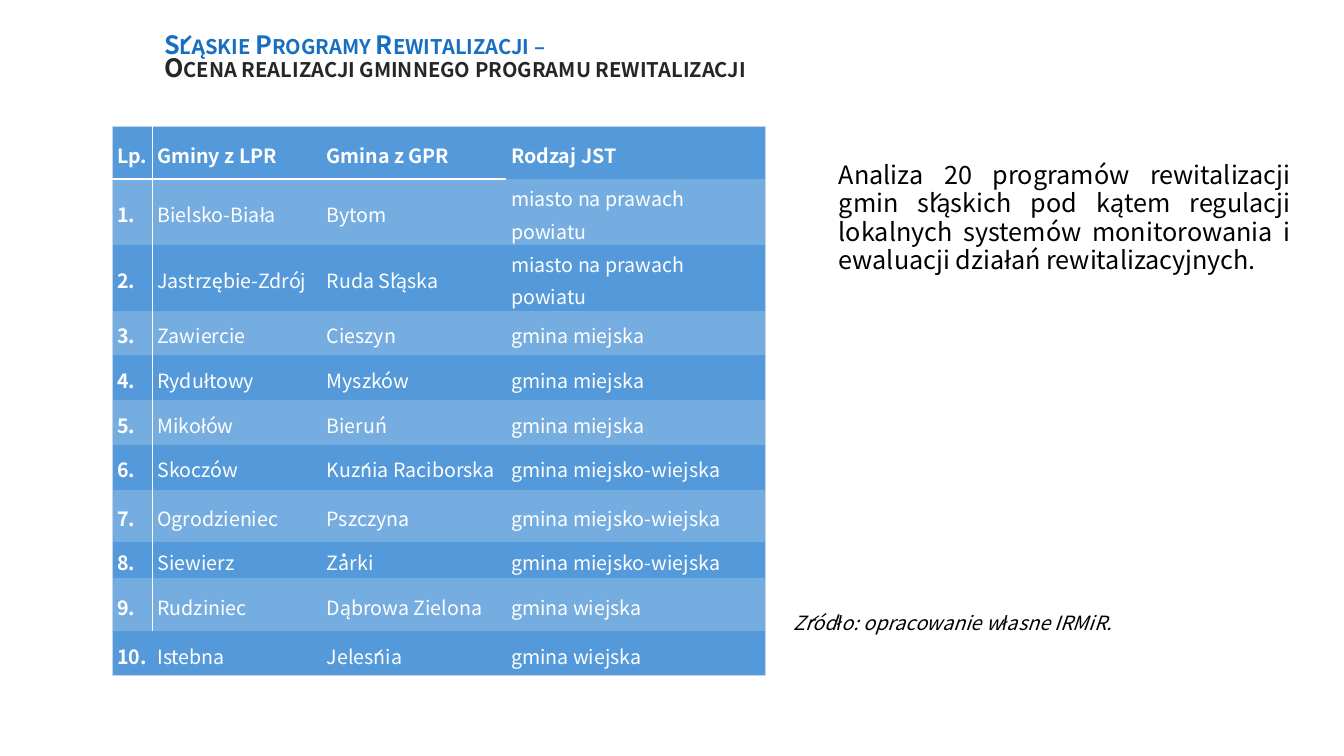
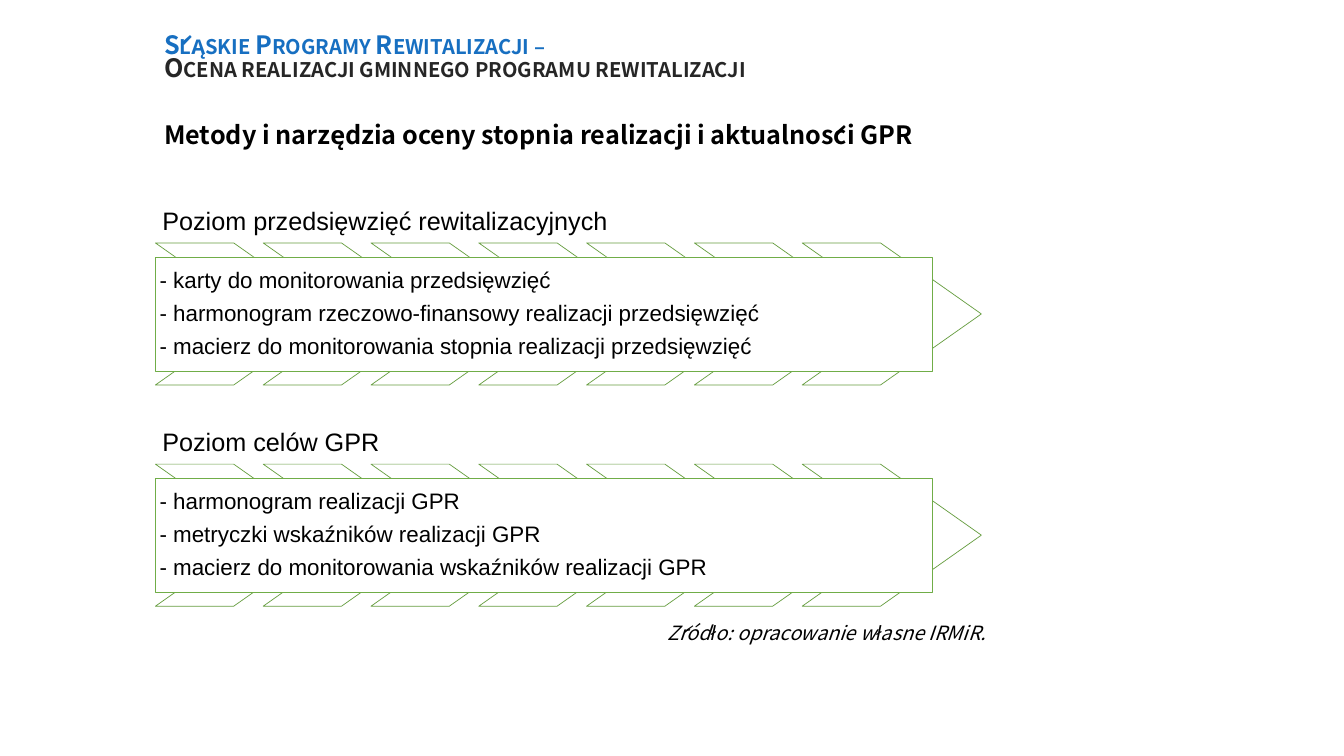
from dataclasses import dataclass

from lxml import etree
from pptx import Presentation
from pptx.dml.color import RGBColor
from pptx.enum.shapes import MSO_SHAPE
from pptx.enum.text import MSO_ANCHOR, MSO_AUTO_SIZE, PP_ALIGN
from pptx.oxml.ns import qn
from pptx.util import Pt

CHEVRON, RECTANGLE = MSO_SHAPE.CHEVRON, MSO_SHAPE.RECTANGLE
TOP, MIDDLE, BOTTOM = MSO_ANCHOR.TOP, MSO_ANCHOR.MIDDLE, MSO_ANCHOR.BOTTOM
LEFT, JUSTIFY = PP_ALIGN.LEFT, PP_ALIGN.JUSTIFY
NO_AUTOFIT = MSO_AUTO_SIZE.NONE
NO_TABLE_STYLE = "{2D5ABB26-0587-4C30-8999-92F81FD0307C}"


@dataclass(frozen=True)
class Theme:
    font: str = "Noto Sans CJK SC"
    diagram_font: str = "Arial"
    large: int = 18
    medium: int = 16
    small: int = 14
    blue: str = "176FC1"
    dark: str = "262626"
    black: str = "000000"
    white: str = "FFFFFF"
    row: str = "5499DA"
    row_light: str = "76ADE1"
    frame: str = "C4D5EB"
    chevron_line: str = "669D40"
    box_line: str = "70AD47"


THEME = Theme()
PROGRAMME = "Śląskie Programy Rewitalizacji –"
TOPIC = "Ocena realizacji gminnego programu rewitalizacji"
SOURCE = "Źródło: opracowanie własne IRMiR."
SUMMARY = ("Analiza 20 programów rewitalizacji gmin śląskich pod kątem regulacji "
           "lokalnych systemów monitorowania i ewaluacji działań rewitalizacyjnych.")
METHODS = "Metody i narzędzia oceny stopnia realizacji i aktualności GPR"

COMMUNES = [
    ("Lp.", "Gminy z LPR", "Gmina z GPR", "Rodzaj JST"),
    ("1.", "Bielsko-Biała", "Bytom", "miasto na prawach powiatu"),
    ("2.", "Jastrzębie-Zdrój", "Ruda Śląska", "miasto na prawach powiatu"),
    ("3.", "Zawiercie", "Cieszyn", "gmina miejska"),
    ("4.", "Rydułtowy", "Myszków", "gmina miejska"),
    ("5.", "Mikołów", "Bieruń", "gmina miejska"),
    ("6.", "Skoczów", "Kuźnia Raciborska", "gmina miejsko-wiejska"),
    ("7.", "Ogrodzieniec", "Pszczyna", "gmina miejsko-wiejska"),
    ("8.", "Siewierz", "Żarki", "gmina miejsko-wiejska"),
    ("9.", "Rudziniec", "Dąbrowa Zielona", "gmina wiejska"),
    ("10.", "Istebna", "Jeleśnia", "gmina wiejska"),
]
COLUMN_WIDTHS = (28.8, 121, 131.8, 185)
ROW_HEIGHTS = (37.5, 37.5, 32, 32, 32, 32, 32, 37.5, 26, 37.5, 32)

LEVELS = [
    ("Poziom przedsięwzięć rewitalizacyjnych", [
        "- karty do monitorowania przedsięwzięć",
        "- harmonogram rzeczowo-finansowy realizacji przedsięwzięć",
        "- macierz do monitorowania stopnia realizacji przedsięwzięć"]),
    ("Poziom celów GPR", [
        "- harmonogram realizacji GPR",
        "- metryczki wskaźników realizacji GPR",
        "- macierz do monitorowania wskaźników realizacji GPR"]),
]


class Deck:
    def __init__(self, theme):
        self.theme = theme
        self.presentation = Presentation()
        self.presentation.slide_width = Pt(960)
        self.presentation.slide_height = Pt(540)
        self.slide = None

    def new_slide(self):
        layout = self.presentation.slide_layouts[1]
        self.slide = self.presentation.slides.add_slide(layout)
        self.title()

    def run(self, paragraph, text, size, color=None, font=None, bold=False, italic=False):
        run = paragraph.add_run()
        run.text = text
        run.font.name = font or self.theme.font
        run.font.size = Pt(size)
        run.font.bold = bold
        run.font.italic = italic
        run.font.color.rgb = RGBColor.from_string(color or self.theme.black)
        return run

    def frame(self, shape, anchor=TOP, inset=(7.2, 3.6)):
        """Set wrapping, anchor and (side, top and bottom) insets of a shape's text."""
        frame = shape.text_frame
        frame.word_wrap = True
        frame.auto_size = NO_AUTOFIT
        frame.vertical_anchor = anchor
        frame.margin_left = frame.margin_right = Pt(inset[0])
        frame.margin_top = frame.margin_bottom = Pt(inset[1])
        return frame

    def spacing(self, paragraph, line, after=0, align=LEFT):
        paragraph.alignment = align
        paragraph.line_spacing = line
        paragraph.space_before = Pt(0)
        paragraph.space_after = Pt(after)

    def place(self, shape, left, top, width, height):
        shape.left, shape.top = Pt(left), Pt(top)
        shape.width, shape.height = Pt(width), Pt(height)

    def title(self):
        heading = self.slide.shapes.title
        self.place(heading, 110, 24, 532, 38)
        paragraph = self.frame(heading, BOTTOM).paragraphs[0]
        self.spacing(paragraph, 0.74)
        lines = ((PROGRAMME, self.theme.blue), (TOPIC, self.theme.dark))
        for index, (text, color) in enumerate(lines):
            if index:
                paragraph.add_line_break()
            run = self.run(paragraph, text, self.theme.large, color, bold=True)
            run.font._element.set("cap", "small")

    def body(self, text, box, line, align=LEFT, bold=False):
        body = self.slide.placeholders[1]
        self.place(body, *box)
        paragraph = self.frame(body).paragraphs[0]
        self.spacing(paragraph, line, align=align)
        properties = paragraph._p.get_or_add_pPr()
        properties.set("marL", "0")
        properties.set("indent", "0")
        etree.SubElement(properties, qn("a:buNone"))
        self.run(paragraph, text, self.theme.large, bold=bold)

    def source_note(self, left, top, width, line=1):
        note = self.slide.shapes.add_textbox(Pt(left), Pt(top), Pt(width), Pt(25))
        paragraph = self.frame(note).paragraphs[0]
        self.spacing(paragraph, line)
        self.run(paragraph, SOURCE, self.theme.small, italic=True)

    def borders(self, cell, sides):
        """Draw cell edges; sides maps L, R, T, B to (colour, width)."""
        properties = cell._tc.get_or_add_tcPr()
        for side in "LRTB":
            if side in sides:
                color, width = sides[side]
                edge = etree.SubElement(properties, qn(f"a:ln{side}"), w=str(Pt(width)))
                fill = etree.SubElement(edge, qn("a:solidFill"))
                etree.SubElement(fill, qn("a:srgbClr"), val=color)

    def table(self, left, top, rows, widths, heights):
        theme = self.theme
        table = self.slide.shapes.add_table(
            len(rows), len(widths), Pt(left), Pt(top),
            Pt(sum(widths)), Pt(sum(heights))).table
        table.first_row = table.horz_banding = False
        table._tbl.tblPr.find(qn("a:tableStyleId")).text = NO_TABLE_STYLE
        for column, width in zip(table.columns, widths):
            column.width = Pt(width)
        for row, height in zip(table.rows, heights):
            row.height = Pt(height)
        last_row, last_column = len(rows) - 1, len(widths) - 1
        outline = (theme.frame, 0.5)
        for r, row in enumerate(rows):
            for c, text in enumerate(row):
                sides = {}
                if c == 0:
                    sides["L"] = outline
                    if r < last_row:
                        sides["R"] = (theme.white, 1)
                if c == last_column:
                    sides["R"] = outline
                if r == 0:
                    sides["T"] = outline
                    if c < last_column:
                        sides["B"] = (theme.white, 1.5)
                if r == last_row:
                    sides["B"] = outline
                cell = table.cell(r, c)
                self.borders(cell, sides)
                cell.fill.solid()
                cell.fill.fore_color.rgb = RGBColor.from_string(
                    theme.row_light if r % 2 else theme.row)
                cell.vertical_anchor = MIDDLE
                cell.margin_left = cell.margin_right = Pt(3.6)
                cell.margin_top = cell.margin_bottom = Pt(0)
                paragraph = cell.text_frame.paragraphs[0]
                self.spacing(paragraph, 1.15, 6)
                self.run(paragraph, text, theme.small, theme.white, bold=r == 0 or c == 0)

    def outlined(self, kind, line, left, top, width, height):
        shape = self.slide.shapes.add_shape(kind, Pt(left), Pt(top), Pt(width), Pt(height))
        shape.shadow.inherit = False
        shape.fill.solid()
        shape.fill.fore_color.rgb = RGBColor.from_string(self.theme.white)
        shape.line.color.rgb = RGBColor.from_string(line)
        shape.line.width = Pt(0.5)
        return shape

    def level(self, left, top, heading, tools):
        """Draw a heading above a chevron band with a list of tools."""
        theme = self.theme
        label = self.slide.shapes.add_textbox(Pt(left), Pt(top), Pt(548), Pt(50))
        paragraph = self.frame(label, BOTTOM, (5, 5)).paragraphs[0]
        self.spacing(paragraph, 0.9)
        self.run(paragraph, heading, theme.large, font=theme.diagram_font)
        for step in range(7):
            chevron = self.outlined(CHEVRON, theme.chevron_line,
                                    left + 77 * step, top + 50, 128, 101.5)
            chevron.adjustments[0] = 0.71
        box = self.outlined(RECTANGLE, theme.box_line, left, top + 60, 555, 81.5)
        frame = self.frame(box, MIDDLE, (3, 3))
        for index, tool in enumerate(tools):
            paragraph = frame.add_paragraph() if index else frame.paragraphs[0]
            self.spacing(paragraph, 0.9, 6.3 if index < len(tools) - 1 else 0)
            self.run(paragraph, tool, theme.medium, font=theme.diagram_font)


def main():
    deck = Deck(THEME)

    deck.new_slide()
    deck.table(80, 90.5, COMMUNES, COLUMN_WIDTHS, ROW_HEIGHTS)
    deck.body(SUMMARY, (592, 112, 337, 232), 0.94, JUSTIFY)
    deck.source_note(559.5, 430.5, 320, 1.15)

    deck.new_slide()
    deck.body(METHODS, (110, 84, 760, 398), 0.9, bold=True)
    for index, (heading, tools) in enumerate(LEVELS):
        deck.level(111, 123.5 + 158 * index, heading, tools)
    deck.source_note(469.5, 440, 249)

    deck.presentation.save("out.pptx")


if __name__ == "__main__":
    main()
